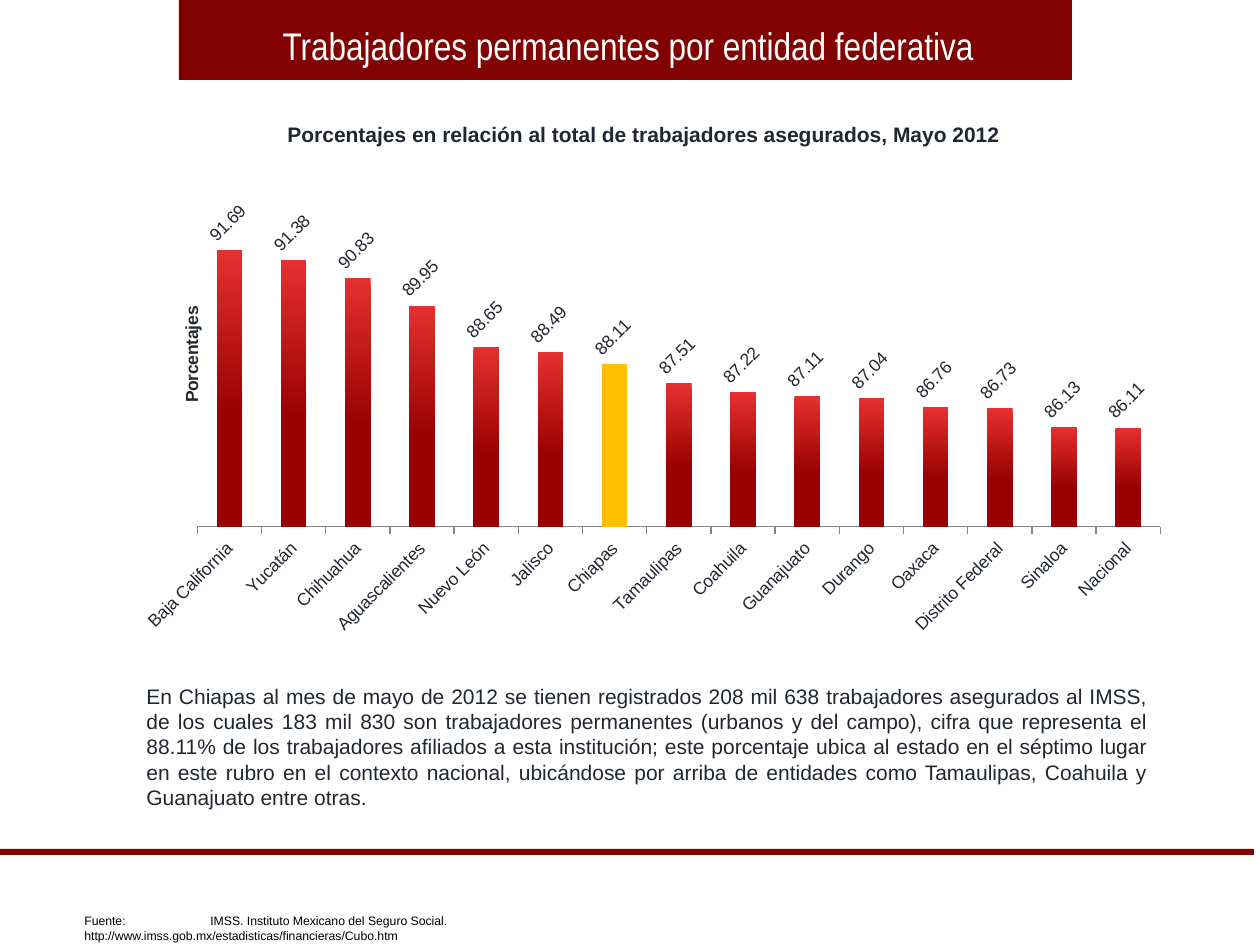
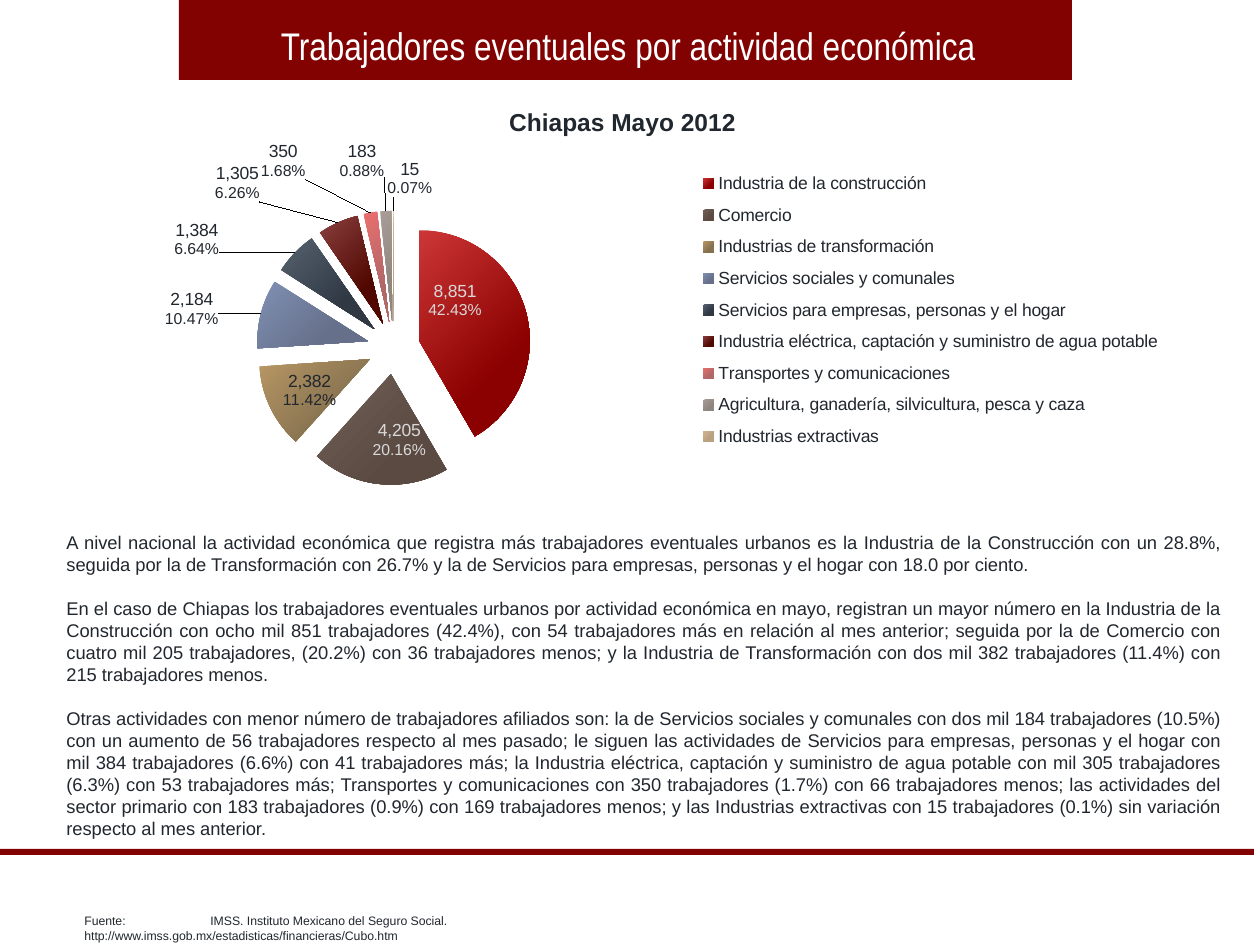
import pptx
import pptx.util
import pptx.chart.data
import pptx.dml.color
import pptx.enum.chart
import pptx.enum.shapes
import pptx.enum.text
import pptx.oxml
import pptx.oxml.ns

PX = 914400 // 126
MAROON, INK, WHITE, BLACK, PALE = "820101", "21272E", "FFFFFF", "000000", "D9D9D9"
FONT, TITLE_FONT = "Arial", "Arial Narrow"
ALIGN = pptx.enum.text.PP_ALIGN
ANCHOR = pptx.enum.text.MSO_ANCHOR
SHAPE = pptx.enum.shapes.MSO_SHAPE
CHART = pptx.enum.chart
LABEL_AT = CHART.XL_LABEL_POSITION
NUMBER_FORMAT = "#,##0.00_ ;\\-#,##0.00\\ "
SOURCE = ("Fuente:\tIMSS. Instituto Mexicano del Seguro Social.\v"
          "http://www.imss.gob.mx/estadisticas/financieras/Cubo.htm")
STATES_FRAME = (144, 180, 1017, 466)
ACTIVITIES_FRAME = (25, 142, 1176, 374)

STATES = [
    ("Baja California", 91.69), ("Yucatán", 91.38), ("Chihuahua", 90.83),
    ("Aguascalientes", 89.95), ("Nuevo León", 88.65), ("Jalisco", 88.49),
    ("Chiapas", 88.11), ("Tamaulipas", 87.51), ("Coahuila", 87.22),
    ("Guanajuato", 87.11), ("Durango", 87.04), ("Oaxaca", 86.76),
    ("Distrito Federal", 86.73), ("Sinaloa", 86.13), ("Nacional", 86.11),
]

ACTIVITIES = [
    ("Industria de la construcción", 8797, "8,851\n42.43%", "CC3636", "8B0000", (-18, -26)),
    ("Comercio", 4241, "4,205\n20.16%", "726056", "5A4A42", (14, 11)),
    ("Industrias de transformación", 2597, "2,382\n11.42%", "B89764", "857150", (-11, 7)),
    ("Servicios sociales y comunales", 2128, "2,184\n10.47%", "8090B4", "66708A", (-35, 16)),
    ("Servicios para empresas, personas y el hogar", 1343, "1,384\n6.64%",
     "55626E", "303844", (-70, 11)),
    ("Industria eléctrica, captación y suministro de agua potable", 1252, "1,305\n6.26%",
     "8A4040", "500800", (-75, -14)),
    ("Transportes y comunicaciones", 416, "350\n1.68%", "EC6E6E", "B06868", (-63, -26)),
    ("Agricultura, ganadería, silvicultura, pesca y caza", 352, "183\n0.88%",
     "A89C96", "908680", (-23, -26)),
    ("Industrias extractivas", 15, "15\n0.07%", "D0B48E", "B8A080", (16, -6)),
]

STATES_TEXT = [
    "En Chiapas al mes de mayo de 2012 se tienen registrados 208 mil 638 trabajadores asegurados "
    "al IMSS, de los cuales 183 mil 830 son trabajadores permanentes (urbanos y del campo), cifra "
    "que representa el 88.11% de los trabajadores afiliados a esta institución; este porcentaje "
    "ubica al estado en el séptimo lugar en este rubro en el contexto nacional, ubicándose por "
    "arriba de entidades como Tamaulipas, Coahuila y Guanajuato entre otras.",
]
ACTIVITIES_TEXT = [
    "A nivel nacional la actividad económica que registra más trabajadores eventuales urbanos es "
    "la Industria de la Construcción con un 28.8%, seguida por la de Transformación con 26.7% y la "
    "de Servicios para empresas, personas y el hogar con 18.0 por ciento.",
    "En el caso de Chiapas los trabajadores eventuales urbanos por actividad económica en mayo, "
    "registran un mayor número en la Industria de la Construcción con ocho mil 851 trabajadores "
    "(42.4%), con 54 trabajadores más en relación al mes anterior; seguida por la de Comercio con "
    "cuatro mil 205 trabajadores, (20.2%) con 36 trabajadores menos; y la Industria de "
    "Transformación con dos mil 382 trabajadores (11.4%) con 215 trabajadores menos.",
    "Otras actividades con menor número de trabajadores afiliados son: la de Servicios sociales y "
    "comunales con dos mil 184 trabajadores (10.5%) con un aumento de 56 trabajadores respecto al "
    "mes pasado; le siguen las actividades de Servicios para empresas, personas y el hogar con mil "
    "384 trabajadores (6.6%) con 41 trabajadores más; la Industria eléctrica, captación y "
    "suministro de agua potable con mil 305 trabajadores (6.3%) con 53 trabajadores más; "
    "Transportes y comunicaciones con 350 trabajadores (1.7%) con 66 trabajadores menos; las "
    "actividades del sector primario con 183 trabajadores (0.9%) con 169 trabajadores menos; y las "
    "Industrias extractivas con 15 trabajadores (0.1%) sin variación respecto al mes anterior.",
]


def box(*lengths):
    return [pptx.util.Emu(n * PX) for n in lengths]


def color(value):
    return pptx.dml.color.RGBColor.from_string(value)


def set_font(font, size, ink=INK, name=FONT, bold=False):
    font.size, font.name, font.bold = pptx.util.Pt(size), name, bold
    font.color.rgb = color(ink)


def format_text(tf, size, ink=INK, name=FONT, bold=False, align=ALIGN.LEFT):
    tf.word_wrap = True
    for p in tf.paragraphs:
        p.alignment = align
        for r in p.runs:
            set_font(r.font, size, ink, name, bold)


def add_shape(s, kind, place, fill=None):
    sp = s.shapes.add_shape(kind, *box(*place))
    sp.shadow.inherit = False
    sp.line.fill.background()
    if fill:
        sp.fill.solid()
        sp.fill.fore_color.rgb = color(fill)
    else:
        sp.fill.background()
    return sp


def add_text(s, text, place, size, **style):
    sp = s.shapes.add_textbox(*box(*place))
    sp.text_frame.text = text
    format_text(sp.text_frame, size, **style)
    return sp


def add_body(s, paragraphs, place, size):
    sp = add_shape(s, SHAPE.ROUNDED_RECTANGLE, place)
    sp.adjustments[0] = 0
    tf = sp.text_frame
    tf.text = "\n".join(paragraphs)
    tf.vertical_anchor = ANCHOR.MIDDLE
    format_text(tf, size, align=ALIGN.JUSTIFY)
    for p in tf.paragraphs[1:]:
        p.space_before = pptx.util.Pt(size * 1.2)


def add_source(s, ink):
    sp = add_text(s, SOURCE, (72, 907, 640, 28), 7, ink=ink)
    pPr = sp.text_frame.paragraphs[0]._p.get_or_add_pPr()
    pPr.append(xml(f'<a:tabLst {pptx.oxml.ns.nsdecls("a")}><a:tab pos="914400" algn="l"/></a:tabLst>'))


def add_slide(prs, title, source_ink):
    s = prs.slides.add_slide(prs.slide_layouts[5])
    add_shape(s, SHAPE.RECTANGLE, (179, 0, 893, 80), MAROON)
    add_shape(s, SHAPE.RECTANGLE, (0, 849, 1254, 6), MAROON)
    sp = s.shapes.title
    sp.element.getparent().append(sp.element)
    sp.left, sp.top, sp.width, sp.height = box(184, 15, 888, 60)
    tf = sp.text_frame
    tf.text = title
    tf.auto_size = pptx.enum.text.MSO_AUTO_SIZE.NONE
    tf.vertical_anchor = ANCHOR.MIDDLE
    format_text(tf, 22, WHITE, TITLE_FONT, align=ALIGN.CENTER)
    add_source(s, source_ink)
    return s


def xml(text):
    return pptx.oxml.parse_xml(text)


def chart_xml(tag, inner="", attributes=""):
    return xml(f'<c:{tag} {pptx.oxml.ns.nsdecls("c")} {attributes}>{inner}</c:{tag}>')


def set_layout(parent, index, frame, place, target="", edge=True):
    old = parent.find(pptx.oxml.ns.qn("c:layout"))
    if old is not None:
        parent.remove(old)
    inner = f'<c:layoutTarget val="{target}"/>' if target else ""
    if edge:
        inner += '<c:xMode val="edge"/><c:yMode val="edge"/>'
    for tag, length, whole in zip("xywh", place, frame[2:] * 2):
        inner += f'<c:{tag} val="{round(length / whole, 3)}"/>'
    parent.insert(index, chart_xml("layout", f"<c:manualLayout>{inner}</c:manualLayout>"))


def rotate(element, degrees):
    for bodyPr in element.iter(pptx.oxml.ns.qn("a:bodyPr")):
        bodyPr.set("rot", str(degrees * 60000))
        bodyPr.set("vert", "horz")


def set_gradient(fill, light, dark, angle, end):
    fill.gradient()
    fill.gradient_angle = angle
    for stop, value, position in zip(fill.gradient_stops, (light, dark), (0, end)):
        stop.color.rgb = color(value)
        stop.position = position


def add_chart(s, kind, categories, values, frame, plot_place):
    data = pptx.chart.data.CategoryChartData()
    data.categories = categories
    data.add_series("Series 1", values)
    chart = s.shapes.add_chart(kind, *box(*frame), data).chart
    chart.has_title = chart.has_legend = False
    set_font(chart.font, 10)
    set_layout(chart._chartSpace.chart.plotArea, 0, frame, plot_place, target="inner")
    return chart


def add_states_chart(s):
    names, values = zip(*STATES)
    chart = add_chart(s, CHART.XL_CHART_TYPE.COLUMN_CLUSTERED, names, values,
                      STATES_FRAME, (53, 29, 964, 318))
    plot = chart.plots[0]
    plot.gap_width = 150
    plot.vary_by_categories = False
    series = plot.series[0]
    set_gradient(series.format.fill, "E63030", "990000", 270, 0.6)
    chiapas = series.points[names.index("Chiapas")].format.fill
    chiapas.solid()
    chiapas.fore_color.rgb = color("FFC000")

    labels = series.data_labels
    labels.show_value = True
    labels.number_format, labels.number_format_is_linked = NUMBER_FORMAT, False
    labels.position = LABEL_AT.OUTSIDE_END
    set_font(labels.font, 10)
    rotate(labels._element, -45)

    axis = chart.category_axis
    axis.major_tick_mark = CHART.XL_TICK_MARK.OUTSIDE
    axis.format.line.color.rgb = color("868686")
    set_font(axis.tick_labels.font, 10)
    rotate(axis._element, -45)

    axis = chart.value_axis
    axis.minimum_scale, axis.maximum_scale = 83, 93
    axis.has_major_gridlines = False
    axis.tick_labels.number_format = NUMBER_FORMAT
    axis.tick_labels.number_format_is_linked = False
    tf = axis.axis_title.text_frame
    tf.text = "Porcentajes"
    set_font(tf.paragraphs[0].runs[0].font, 10, bold=True)
    title = axis.axis_title._element
    rotate(title, -90)
    set_layout(title, 1, STATES_FRAME, (33, 123))
    axis.visible = False


def add_activities_chart(s):
    chart = add_chart(s, CHART.XL_CHART_TYPE.PIE, [a[0] for a in ACTIVITIES],
                      [a[1] for a in ACTIVITIES], ACTIVITIES_FRAME, (0, 69, 737, 274))
    chart.has_legend = True
    chart.legend.position = CHART.XL_LEGEND_POSITION.RIGHT
    chart.legend.include_in_layout = False
    set_font(chart.legend.font, 10)
    set_layout(chart.legend._element, 1, ACTIVITIES_FRAME, (665, 20, 482, 297))
    series = chart.plots[0].series[0]
    series._element.find(pptx.oxml.ns.qn("c:tx")).addnext(
        chart_xml("explosion", attributes='val="24"'))
    labels = series.data_labels
    labels.show_value = labels.show_percentage = True
    labels.number_format, labels.number_format_is_linked = "0.00%", False
    for i, (_, _, text, light, dark, offset) in enumerate(ACTIVITIES):
        point = series.points[i]
        set_gradient(point.format.fill, light, dark, 315, 0.7)
        label = point.data_label
        tf = label.text_frame
        tf.text = text
        for p, size in zip(tf.paragraphs, (10, 9)):
            set_font(p.runs[0].font, size, PALE if i < 2 else INK)
        label.position = LABEL_AT.CENTER if i < 3 else LABEL_AT.OUTSIDE_END
        dLbl = tf._txBody.getparent().getparent()
        dLbl.find(pptx.oxml.ns.qn("c:showPercent")).set("val", "1")
        set_layout(dLbl, 1, ACTIVITIES_FRAME, offset, edge=False)


def main():
    prs = pptx.Presentation()
    prs.slide_width, prs.slide_height = box(1260, 945)

    s = add_slide(prs, "Trabajadores permanentes por entidad federativa", BLACK)
    add_text(s, "Porcentajes en relación al total de trabajadores asegurados, Mayo 2012",
             (179, 115, 930, 38), 12, bold=True, align=ALIGN.CENTER)
    add_states_chart(s)
    add_body(s, STATES_TEXT, (134, 667, 1027, 159), 12)

    s = add_slide(prs, "Trabajadores eventuales por actividad económica", INK)
    add_text(s, "Chiapas Mayo 2012", (496, 101, 253, 43), 14, bold=True, align=ALIGN.CENTER)
    add_activities_chart(s)
    add_body(s, ACTIVITIES_TEXT, (54, 527, 1181, 316), 10.5)

    prs.save("out.pptx")


if __name__ == "__main__":
    main()
